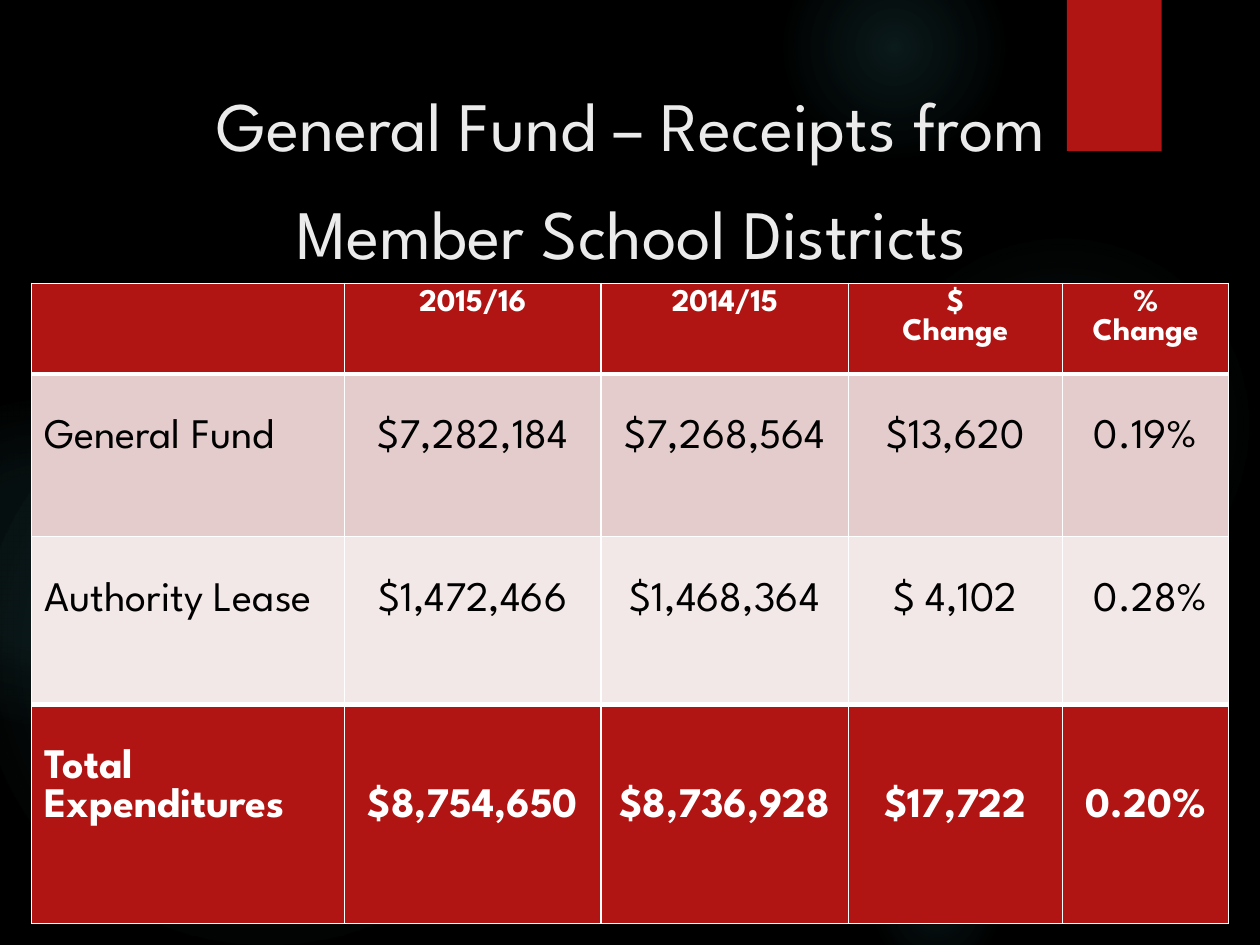
from collections import namedtuple

from lxml import etree
from pptx import Presentation
from pptx import util as u
from pptx.dml.color import RGBColor
from pptx.enum import shapes, text
from pptx.oxml import parse_xml
from pptx.oxml.ns import nsdecls, qn

Box = namedtuple("Box", "left top width height")
FONT = "League Spartan"
COLORS = {
    "night": "000000", "glow": "50B9C1", "red": "B01513", "title": "EBEBEB",
    "white": "FFFFFF", "black": "000000", "rose": "E4CCCC", "blush": "F2E8E7",
}
GLOWS = [
    (Box(17.5, 4.65, 7.82, 7.82), [(0, 7), (36, 6), (69, 0)]),
    (Box(15.8, -1.27, 4.45, 4.45), [(0, 14), (36, 7), (73, 0)]),
    (Box(17.5, 16.94, 2.74, 2.74), [(0, 9), (36, 5), (66, 0)]),
    (Box(-0.43, 7.42, 11.63, 11.63), [(0, 11), (36, 10), (75, 0)]),
    (Box(-2.34, 8.05, 6.55, 6.55), [(0, 8), (36, 8), (72, 0)]),
]
COLUMN_WIDTHS = [6.3, 5.18, 4.98, 4.32, 3.35]
Row = namedtuple("Row", "height fill color size bold label_top value_top top_line bottom_line cells")
ROWS = [
    Row(1.83, "red", "white", 18, True, 0.13, 0.13, 1, 3,
        ["", "2015/16", "2014/15", "$\nChange", "%\nChange"]),
    Row(3.28, "rose", "black", 24, False, 0.91, 0.91, 3, 1,
        ["General Fund", "$7,282,184", "$7,268,564", "$13,620", "0.19%"]),
    Row(3.38, "blush", "black", 24, False, 0.91, 0.91, 1, 3,
        ["Authority Lease", "$1,472,466", "$1,468,364", "$ 4,102", " 0.28%"]),
    Row(4.42, "red", "white", 24, True, 0.91, 1.69, 3, 1,
        ["Total Expenditures", "$8,754,650", "$8,736,928", "$17,722", "0.20%"]),
]


def rgb(name):
    """Return the named colour."""
    return RGBColor.from_string(COLORS[name])


def lengths(box):
    """Convert a box in centimetres to slide lengths."""
    return [u.Cm(value) for value in box]


def add_run(para, words, size, color, bold=False):
    """Add one formatted run to a paragraph."""
    span = para.add_run()
    span.text = words
    span.font.name = FONT
    span.font.size = u.Pt(size)
    span.font.bold = bold
    span.font.color.rgb = rgb(color)


def add_plain_shape(page, kind, box):
    """Add a shape without outline or inherited shadow."""
    shape = page.shapes.add_shape(kind, *lengths(box))
    shape.shadow.inherit = False
    shape.line.fill.background()
    return shape


def add_glow(page, box, stops):
    """Add a round glow that fades out from its centre."""
    glow = add_plain_shape(page, shapes.MSO_SHAPE.OVAL, box)
    glow.fill.gradient()
    gradient = glow.element.spPr.find(qn("a:gradFill"))
    marks = "".join(
        f'<a:gs pos="{place * 1000}"><a:srgbClr val="{COLORS["glow"]}">'
        f'<a:alpha val="{alpha * 1000}"/></a:srgbClr></a:gs>'
        for place, alpha in stops)
    gradient.getparent().replace(gradient, parse_xml(
        f'<a:gradFill {nsdecls("a")} rotWithShape="1"><a:gsLst>{marks}</a:gsLst>'
        '<a:path path="circle"><a:fillToRect l="50000" t="50000" r="50000" b="50000"/>'
        '</a:path></a:gradFill>'))


def add_ribbon(page, box):
    """Add the red ribbon with its soft shadow."""
    ribbon = add_plain_shape(page, shapes.MSO_SHAPE.RECTANGLE, box)
    ribbon.fill.solid()
    ribbon.fill.fore_color.rgb = rgb("red")
    ribbon.element.spPr.find(qn("a:effectLst")).append(parse_xml(
        f'<a:outerShdw {nsdecls("a")} blurRad="{u.Pt(3)}" dist="{u.Pt(2)}" dir="5400000">'
        '<a:srgbClr val="000000"><a:alpha val="45000"/></a:srgbClr></a:outerShdw>'))


def place_title(page, box, words):
    """Move the title placeholder into its box, in front of the decoration."""
    title = page.shapes.title
    title.left, title.top, title.width, title.height = lengths(box)
    title.element.getparent().append(title.element)
    frame = title.text_frame
    frame.word_wrap = True
    frame.auto_size = text.MSO_AUTO_SIZE.NONE
    frame.vertical_anchor = text.MSO_ANCHOR.TOP
    para = frame.paragraphs[0]
    para.alignment = text.PP_ALIGN.CENTER
    para.line_spacing = 1.3
    add_run(para, words, 39.6, "title")


def set_borders(cell, top, bottom):
    """Give a cell white borders with the given top and bottom weights."""
    properties = cell._tc.get_or_add_tcPr()
    for side, weight in (("L", 1), ("R", 1), ("T", top), ("B", bottom)):
        line = etree.SubElement(properties, qn(f"a:ln{side}"), w=str(u.Pt(weight)))
        fill = etree.SubElement(line, qn("a:solidFill"))
        etree.SubElement(fill, qn("a:srgbClr"), val=COLORS["white"])


def fill_cell(cell, words, row, is_label):
    """Format one table cell and write its lines."""
    set_borders(cell, row.top_line, row.bottom_line)
    cell.fill.solid()
    cell.fill.fore_color.rgb = rgb(row.fill)
    cell.vertical_anchor = text.MSO_ANCHOR.TOP
    cell.margin_top = u.Cm(row.label_top if is_label else row.value_top)
    for number, line in enumerate(words.split("\n")):
        frame = cell.text_frame
        para = frame.add_paragraph() if number else frame.paragraphs[0]
        para.alignment = text.PP_ALIGN.LEFT if is_label else text.PP_ALIGN.CENTER
        if line:
            add_run(para, line, row.size, row.color, row.bold)


def add_receipts_table(page, box):
    """Add the table of receipts."""
    frame = page.shapes.add_table(len(ROWS), len(COLUMN_WIDTHS), *lengths(box))
    table = frame.table
    for column, width in zip(table.columns, COLUMN_WIDTHS):
        column.width = u.Cm(width)
    for line, row in zip(table.rows, ROWS):
        line.height = u.Cm(row.height)
        for place, (cell, words) in enumerate(zip(line.cells, row.cells)):
            fill_cell(cell, words, row, place == 0)


def main():
    """Build and save the slide."""
    deck = Presentation()
    deck.slide_width, deck.slide_height = u.Cm(25.4), u.Cm(19.05)
    page = deck.slides.add_slide(deck.slide_layouts.get_by_name("Title Only"))
    page.background.fill.solid()
    page.background.fill.fore_color.rgb = rgb("night")
    for box, stops in GLOWS:
        add_glow(page, box, stops)
    add_ribbon(page, Box(21.51, 0, 1.91, 3.05))
    place_title(page, Box(2.29, 1.02, 20.88, 3.23),
                "General Fund – Receipts from Member School Districts")
    add_receipts_table(page, Box(0.64, 5.71, 24.13, 12.91))
    deck.save("out.pptx")


if __name__ == "__main__":
    main()
